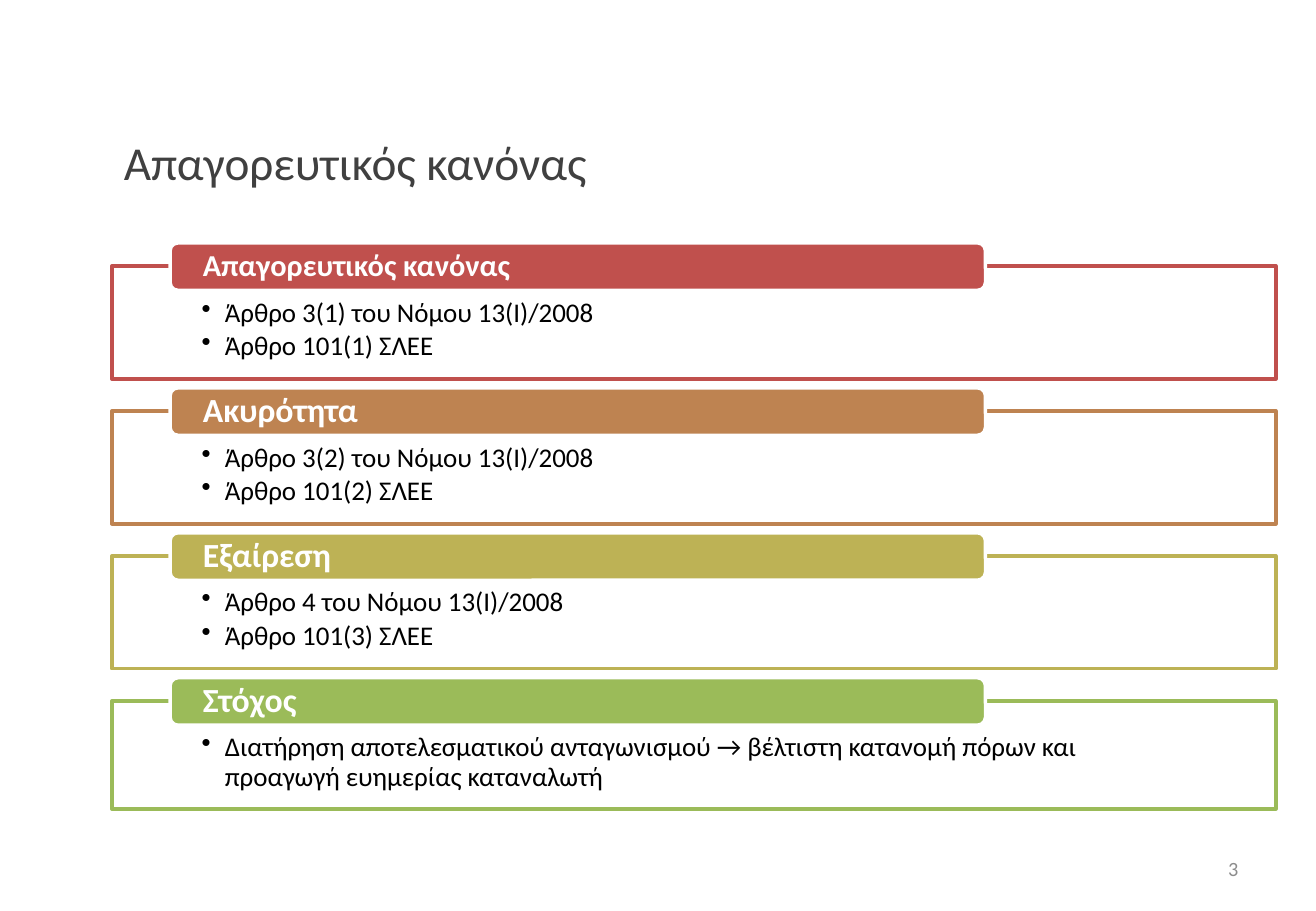
from dataclasses import dataclass

from lxml.etree import SubElement
from pptx import Presentation
from pptx.dml.color import RGBColor
from pptx.enum.shapes import MSO_SHAPE as Shape
from pptx.enum.text import MSO_ANCHOR as Anchor, PP_ALIGN as Align
from pptx.oxml.ns import qn
from pptx.slide import Slide
from pptx.text.text import TextFrame, _Paragraph as Paragraph
from pptx.util import Inches, Pt

FONT = "Calibri"
COLORS = {
    "title": "404040",
    "number": "8C8C8C",
    "text": "000000",
    "white": "FFFFFF",
    "red": "C0504D",
    "orange": "BE8351",
    "ochre": "BDB255",
    "green": "9BBB59",
}
FIRST_TOP, LAST_TOP = 2.0, 5.58
FRAME_LEFT, FRAME_WIDTH, FRAME_DROP = 0.92, 9.58, 0.19
LABEL_LEFT, LABEL_WIDTH, LABEL_HEIGHT = 1.4, 6.71, 0.39


@dataclass
class Rule:
    heading: str
    points: list[str]
    color: str
    heading_size: int = 20
    frame_height: float = 0.93


RULES = [
    Rule("Απαγορευτικός κανόνας",
         ["Άρθρο 3(1) του Νόμου 13(Ι)/2008", "Άρθρο 101(1) ΣΛΕΕ"],
         "red", heading_size=18),
    Rule("Ακυρότητα",
         ["Άρθρο 3(2) του Νόμου 13(Ι)/2008", "Άρθρο 101(2) ΣΛΕΕ"], "orange"),
    Rule("Εξαίρεση",
         ["Άρθρο 4 του Νόμου 13(Ι)/2008", "Άρθρο 101(3) ΣΛΕΕ"], "ochre"),
    Rule("Στόχος",
         ["Διατήρηση αποτελεσματικού ανταγωνισμού → βέλτιστη κατανομή πόρων "
          "και προαγωγή ευημερίας καταναλωτή"],
         "green", frame_height=0.89),
]


def rgb(name: str) -> RGBColor:
    return RGBColor.from_string(COLORS[name])


def style(paragraph: Paragraph, size: int, color: str, bold: bool = False,
          align: Align = Align.LEFT) -> None:
    paragraph.alignment = align
    for run in paragraph.runs:
        run.font.name = FONT
        run.font.size = Pt(size)
        run.font.bold = bold
        run.font.color.rgb = rgb(color)


def add_bullet(paragraph: Paragraph) -> None:
    properties = paragraph._p.get_or_add_pPr()
    properties.set("marL", str(Inches(0.19)))
    properties.set("indent", str(Inches(-0.19)))
    SubElement(properties, qn("a:buChar"), char="•")


def add_panel(slide: Slide, kind: Shape, box: tuple[float, ...], fill: str,
              line: str, insets: tuple[float, ...], anchor: Anchor) -> TextFrame:
    """Draw a bordered shape and return its text frame; insets run left, top, right, bottom."""
    panel = slide.shapes.add_shape(kind, *map(Inches, box))
    panel.shadow.inherit = False
    panel.fill.solid()
    panel.fill.fore_color.rgb = rgb(fill)
    panel.line.color.rgb = rgb(line)
    panel.line.width = Pt(2)
    frame = panel.text_frame
    frame.word_wrap = True
    frame.vertical_anchor = anchor
    (frame.margin_left, frame.margin_top,
     frame.margin_right, frame.margin_bottom) = map(Inches, insets)
    return frame


def add_rule(slide: Slide, rule: Rule, top: float) -> None:
    body = add_panel(
        slide, Shape.RECTANGLE,
        (FRAME_LEFT, top + FRAME_DROP, FRAME_WIDTH, rule.frame_height),
        "white", rule.color, (0.74, 0.27, 0.74, 0.12), Anchor.TOP)
    body.text = "\n".join(rule.points)
    for point in body.paragraphs:
        add_bullet(point)
        point.line_spacing = 0.9
        point.space_after = Pt(2.4)
        style(point, 16, "text")

    label = add_panel(
        slide, Shape.ROUNDED_RECTANGLE,
        (LABEL_LEFT, top, LABEL_WIDTH, LABEL_HEIGHT),
        rule.color, "white", (0.25, 0, 0.25, 0), Anchor.MIDDLE)
    label.text = rule.heading
    label.paragraphs[0].line_spacing = 0.9
    style(label.paragraphs[0], rule.heading_size, "white", bold=True)


def add_title(slide: Slide, text: str) -> None:
    title = slide.shapes.title
    title.left, title.top = Inches(0.92), Inches(0.85)
    title.width, title.height = Inches(9.58), Inches(0.96)
    title.text_frame.text = text
    title.text_frame.vertical_anchor = Anchor.MIDDLE
    style(title.text_frame.paragraphs[0], 28, "title")


def add_page_number(slide: Slide, number: int) -> None:
    box = slide.shapes.add_textbox(
        Inches(7.76), Inches(6.95), Inches(2.53), Inches(0.4))
    frame = box.text_frame
    frame.word_wrap = True
    frame.vertical_anchor = Anchor.MIDDLE
    frame.text = str(number)
    style(frame.paragraphs[0], 12, "number", align=Align.RIGHT)


def main() -> None:
    deck = Presentation()
    deck.slide_width, deck.slide_height = Inches(10.83), Inches(7.5)
    slide = deck.slides.add_slide(deck.slide_layouts.get_by_name("Title Only"))
    add_title(slide, "Απαγορευτικός κανόνας")
    pitch = (LAST_TOP - FIRST_TOP) / (len(RULES) - 1)
    for index, rule in enumerate(RULES):
        add_rule(slide, rule, FIRST_TOP + index * pitch)
    add_page_number(slide, 3)
    deck.save("out.pptx")


if __name__ == "__main__":
    main()
